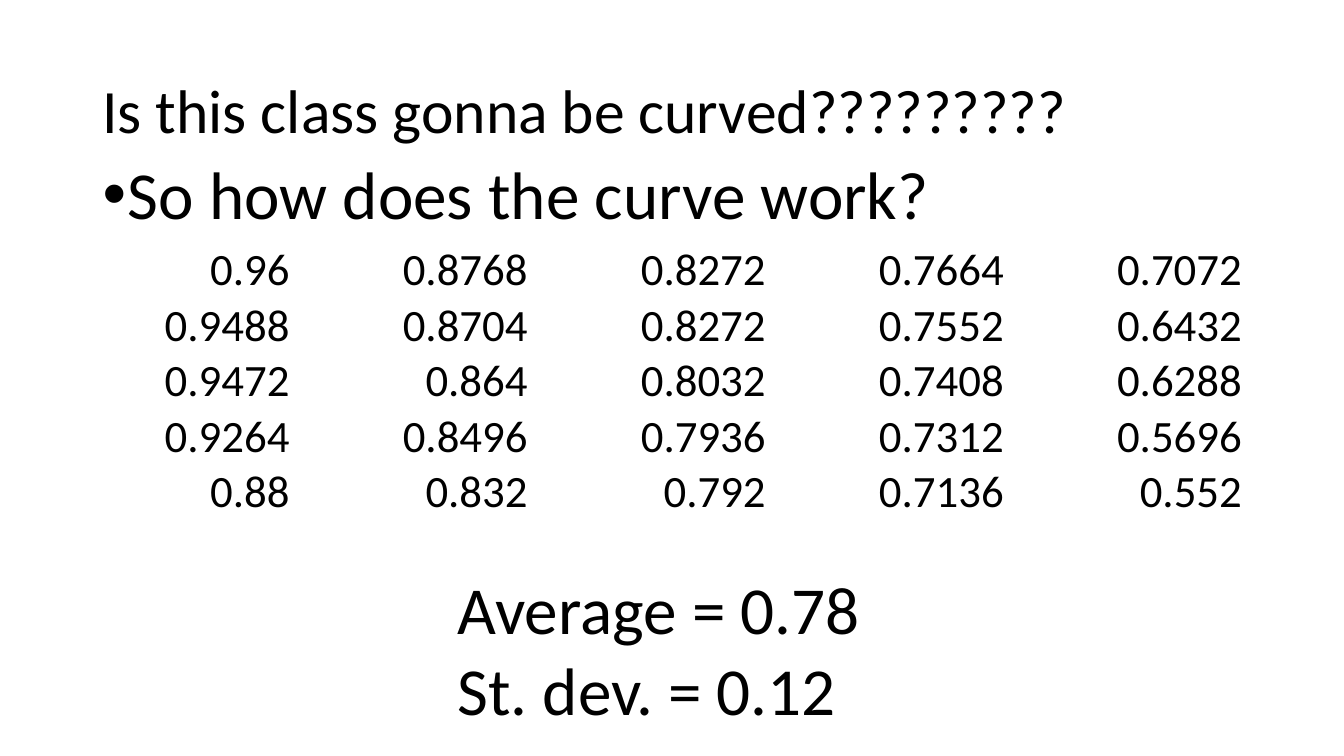
from lxml import etree
from pptx import Presentation
from pptx.dml.color import RGBColor
from pptx.enum.text import MSO_ANCHOR, MSO_AUTO_SIZE, PP_ALIGN
from pptx.oxml.ns import qn
from pptx.util import Cm, Pt

BLACK = RGBColor(0, 0, 0)
LEFT, RIGHT = PP_ALIGN.LEFT, PP_ALIGN.RIGHT
TOP, MIDDLE, BOTTOM = MSO_ANCHOR.TOP, MSO_ANCHOR.MIDDLE, MSO_ANCHOR.BOTTOM
FIXED, GROW = MSO_AUTO_SIZE.NONE, MSO_AUTO_SIZE.SHAPE_TO_FIT_TEXT

SCORES = [
    ["0.96", "0.8768", "0.8272", "0.7664", "0.7072"],
    ["0.9488", "0.8704", "0.8272", "0.7552", "0.6432"],
    ["0.9472", "0.864", "0.8032", "0.7408", "0.6288"],
    ["0.9264", "0.8496", "0.7936", "0.7312", "0.5696"],
    ["0.88", "0.832", "0.792", "0.7136", "0.552"],
]


class ScoreSlide:
    font_name = "Calibri"

    def __init__(self, deck):
        self.slide = deck.slides.add_slide(deck.slide_layouts[1])

    def style(self, frame, size, align=LEFT):
        for paragraph in frame.paragraphs:
            paragraph.alignment = align
            for run in paragraph.runs:
                run.font.name = self.font_name
                run.font.size = Pt(size)
                run.font.color.rgb = BLACK

    def fill_placeholder(self, holder, text, size, anchor, left, top, width, height):
        holder.left, holder.top = Cm(left), Cm(top)
        holder.width, holder.height = Cm(width), Cm(height)
        frame = holder.text_frame
        frame.text = text
        frame.auto_size = FIXED
        frame.vertical_anchor = anchor
        frame.paragraphs[0].line_spacing = 0.9
        self.style(frame, size)
        return frame

    def title(self, text, size, *box):
        self.fill_placeholder(self.slide.shapes.title, text, size, MIDDLE, *box)

    def bullet(self, text, size, *box):
        frame = self.fill_placeholder(self.slide.placeholders[1], text, size, TOP, *box)
        question = frame.paragraphs[0]
        question.space_before = Pt(10)
        properties = question._p.get_or_add_pPr()
        properties.set("marL", str(Cm(0.64)))
        properties.set("indent", str(Cm(-0.64)))
        etree.SubElement(properties, qn("a:buFont")).set("typeface", "Arial")
        etree.SubElement(properties, qn("a:buChar")).set("char", "•")

    def table(self, rows, size, left, top, column_width, row_height):
        columns = len(rows[0])
        table = self.slide.shapes.add_table(
            len(rows), columns, Cm(left), Cm(top),
            Cm(column_width * columns), Cm(row_height * len(rows))).table
        table.first_row = table.horz_banding = False
        for table_row, scores in zip(table.rows, rows):
            for cell, score in zip(table_row.cells, scores):
                cell.text = score
                cell.fill.background()
                cell.vertical_anchor = BOTTOM
                cell.margin_left = cell.margin_right = cell.margin_top = Cm(0.02)
                cell.margin_bottom = 0
                self.style(cell.text_frame, size, RIGHT)

    def text(self, text, size, left, top, width, height):
        frame = self.slide.shapes.add_textbox(
            Cm(left), Cm(top), Cm(width), Cm(height)).text_frame
        frame.text = text
        frame.word_wrap = False
        frame.auto_size = GROW
        self.style(frame, size)


def main():
    deck = Presentation()
    deck.slide_width, deck.slide_height = Cm(33.87), Cm(19.05)
    page = ScoreSlide(deck)
    page.title("Is this class gonna be curved?????????", 44, 2.33, 1.01, 29.21, 3.68)
    page.bullet("So how does the curve work?", 48, 2.33, 3.94, 29.21, 13.23)
    page.table(SCORES, 32, 1.32, 6.1, 6, 1.4)
    page.text("Average = 0.78\nSt. dev. = 0.12", 48, 11.28, 14.17, 10.77, 4.36)
    deck.save("out.pptx")


if __name__ == "__main__":
    main()
